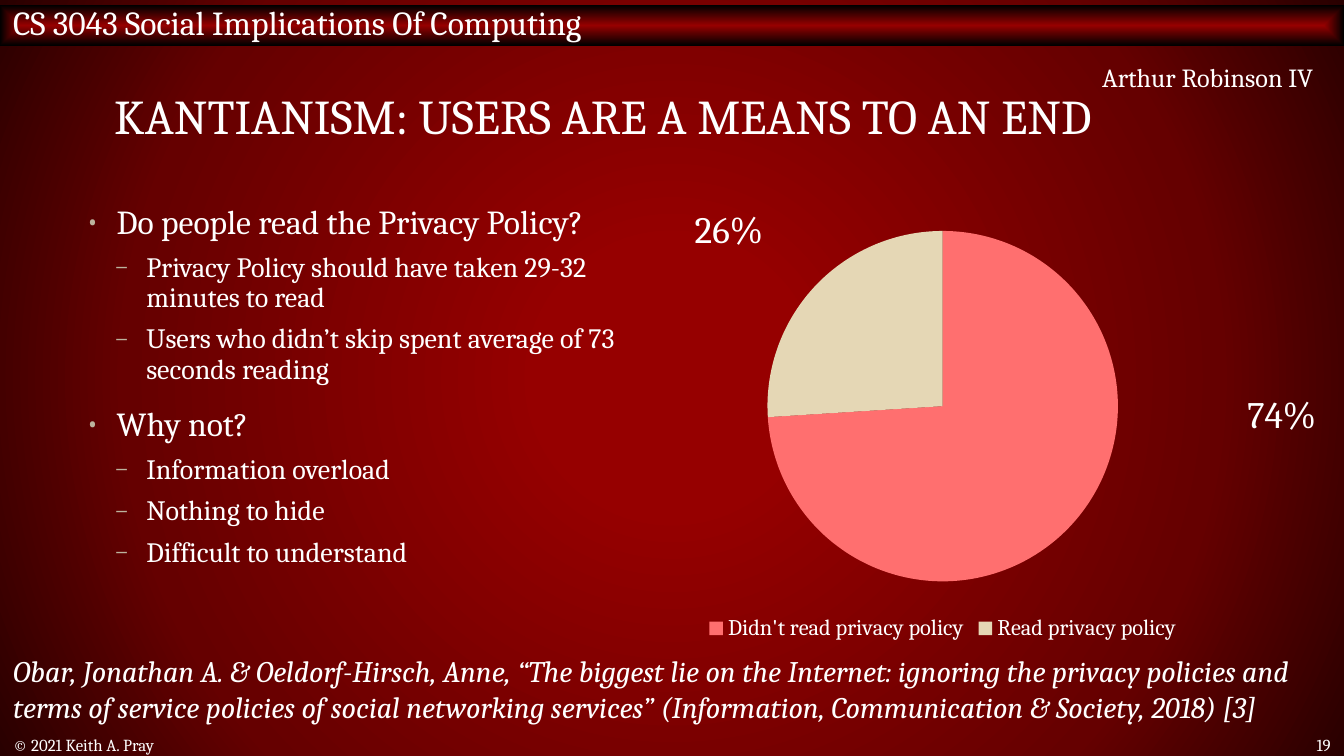
from lxml.etree import SubElement
from pptx import Presentation
from pptx.chart.data import CategoryChartData
from pptx.dml.color import RGBColor
from pptx.enum.chart import XL_CHART_TYPE, XL_LEGEND_POSITION
from pptx.enum.shapes import MSO_SHAPE
from pptx.enum.text import MSO_ANCHOR, MSO_AUTO_SIZE, PP_ALIGN
from pptx.oxml.ns import qn
from pptx.util import Inches, Pt

WIDTH = Inches(10)
HEIGHT = WIDTH * 9 // 16
COLUMN, ROW = WIDTH / 100, HEIGHT / 100
FONT = "Cambria"
WHITE = "FFFFFF"
BULLET = "BCB49E"
LEVELS = [("•", 18, 12, 0.23), ("–", 15, 6, 0.45)]
POINTS = [
    (0, "Do people read the Privacy Policy?"),
    (1, "Privacy Policy should have taken 29-32 minutes to read"),
    (1, "Users who didn’t skip spent average of 73 seconds reading"),
    (0, "Why not?"),
    (1, "Information overload"),
    (1, "Nothing to hide"),
    (1, "Difficult to understand"),
]
SHARES = [
    ("Didn't read privacy policy", 74, "FF6F6F", (91.8, 51.56)),
    ("Read privacy policy", 26, "E5D7B5", (50.7, 27.02)),
]
CITATION = (
    "Obar, Jonathan A. & Oeldorf-Hirsch, Anne, “The biggest lie on the Internet: "
    "ignoring the privacy policies and terms of service policies of social networking "
    "services” (Information, Communication & Society, 2018) [3]"
)


def color(code):
    return RGBColor.from_string(code)


def grid(left, top, width, height):
    return [round(n) for n in (left * COLUMN, top * ROW, width * COLUMN, height * ROW)]


def style_font(font, size):
    font.name = FONT
    font.size = Pt(size)
    font.color.rgb = color(WHITE)


def paint_gradient(fill, parent, path, stops):
    fill.solid()
    solid = parent.find(qn("a:solidFill"))
    gradient = parent.makeelement(qn("a:gradFill"), {"rotWithShape": "1"})
    stop_list = SubElement(gradient, qn("a:gsLst"))
    for position, code in stops:
        stop = SubElement(stop_list, qn("a:gs"), pos=str(position * 1000))
        SubElement(stop, qn("a:srgbClr"), val=code)
    center = SubElement(gradient, qn("a:path"), path=path)
    SubElement(center, qn("a:fillToRect"), {side: "50000" for side in "ltrb"})
    parent.replace(solid, gradient)


def write(shape, text, size, align=PP_ALIGN.LEFT, anchor=MSO_ANCHOR.TOP,
          spacing=None, italic=None):
    frame = shape.text_frame
    frame.word_wrap = True
    frame.auto_size = MSO_AUTO_SIZE.NONE
    frame.vertical_anchor = anchor
    paragraph = frame.paragraphs[0]
    paragraph.alignment = align
    paragraph.line_spacing = spacing
    run = paragraph.add_run()
    run.text = text
    style_font(run.font, size)
    run.font.italic = italic


def add_text(slide, place, text, size, **options):
    write(slide.shapes.add_textbox(*grid(*place)), text, size, **options)


def add_course_bar(slide):
    bar = slide.shapes.add_shape(MSO_SHAPE.RECTANGLE, *grid(0, 0.71, 100, 5.33))
    bar.shadow.inherit = False
    bar.line.fill.background()
    paint_gradient(bar.fill, bar.element.spPr, "shape", [(0, "960000"), (100, "000000")])
    bar.text_frame.margin_top = 0
    write(bar, "CS 3043 Social Implications Of Computing", 18, anchor=MSO_ANCHOR.MIDDLE)


def set_title(slide, text):
    title = slide.shapes.title
    title.left, title.top, title.width, title.height = grid(7.5, 7.11, 85, 17.78)
    write(title, text, 26, anchor=MSO_ANCHOR.MIDDLE, spacing=0.8)


def add_bullets(slide, place, points):
    frame = slide.shapes.add_textbox(*grid(*place)).text_frame
    frame.word_wrap = True
    for index, (level, text) in enumerate(points):
        mark, size, space, indent = LEVELS[level]
        paragraph = frame.add_paragraph() if index else frame.paragraphs[0]
        properties = paragraph._p.get_or_add_pPr()
        properties.set("marL", str(Inches(indent)))
        properties.set("indent", str(Inches(-0.23)))
        bullet_color = SubElement(properties, qn("a:buClr"))
        SubElement(bullet_color, qn("a:srgbClr"), val=BULLET)
        SubElement(properties, qn("a:buSzPct"), val="90000")
        SubElement(properties, qn("a:buFont"), typeface=FONT)
        SubElement(properties, qn("a:buChar"), char=mark)
        paragraph.level = level
        paragraph.line_spacing = 0.9
        if index:
            paragraph.space_before = Pt(space)
        run = paragraph.add_run()
        run.text = text
        style_font(run.font, size)


def place_plot(chart, **shares):
    area = chart._chartSpace.chart.plotArea
    for old in area.findall(qn("c:layout")):
        area.remove(old)
    layout = area.makeelement(qn("c:layout"), {})
    area.insert(0, layout)
    manual = SubElement(layout, qn("c:manualLayout"))
    settings = {"layoutTarget": "inner", "xMode": "edge", "yMode": "edge", **shares}
    for name, value in settings.items():
        SubElement(manual, qn(f"c:{name}"), val=str(value))


def add_pie(slide, place, shares):
    data = CategoryChartData()
    data.categories = [label for label, *_ in shares]
    data.add_series("Series 1", [value for _, value, *_ in shares])
    chart = slide.shapes.add_chart(XL_CHART_TYPE.PIE, *grid(*place), data).chart
    chart.has_title = False
    style_font(chart.font, 10)
    chart.has_legend = True
    chart.legend.position = XL_LEGEND_POSITION.BOTTOM
    chart.legend.include_in_layout = False
    style_font(chart.legend.font, 12)
    place_plot(chart, x=0.23, y=0.04, w=0.54, h=0.81)
    for index, (_, value, code, corner) in enumerate(shares):
        fill = chart.plots[0].series[0].points[index].format.fill
        fill.solid()
        fill.fore_color.rgb = color(code)
        add_text(slide, (*corner, 8.5, 7.11), f"{value}%", 20, spacing=0.9)


def main():
    presentation = Presentation()
    presentation.slide_width, presentation.slide_height = WIDTH, HEIGHT
    slide = presentation.slides.add_slide(presentation.slide_layouts[5])
    backdrop = slide.background.fill
    backdrop.solid()
    paint_gradient(backdrop, slide.element.find(".//" + qn("p:bgPr")), "circle",
                   [(17, "960000"), (71, "650000"), (100, "290000")])
    add_course_bar(slide)
    set_title(slide, "KANTIANISM: USERS ARE A MEANS TO AN END")
    add_bullets(slide, (5.4, 26.31, 41.5, 65.24), POINTS)
    add_text(slide, (0, 97.07, 60.8, 2.84), "© 2021 Keith A. Pray", 9,
             anchor=MSO_ANCHOR.MIDDLE)
    add_text(slide, (93.2, 97.07, 6.8, 2.84), "19", 9,
             align=PP_ALIGN.RIGHT, anchor=MSO_ANCHOR.MIDDLE)
    add_text(slide, (74.9, 7.29, 23.8, 6.04), "Arthur Robinson IV", 14,
             align=PP_ALIGN.RIGHT)
    add_pie(slide, (45.6, 28.27, 49.1, 57.24), SHARES)
    add_text(slide, (0, 85.51, 100.7, 11.38), CITATION, 16, italic=True)
    presentation.save("out.pptx")


if __name__ == "__main__":
    main()
